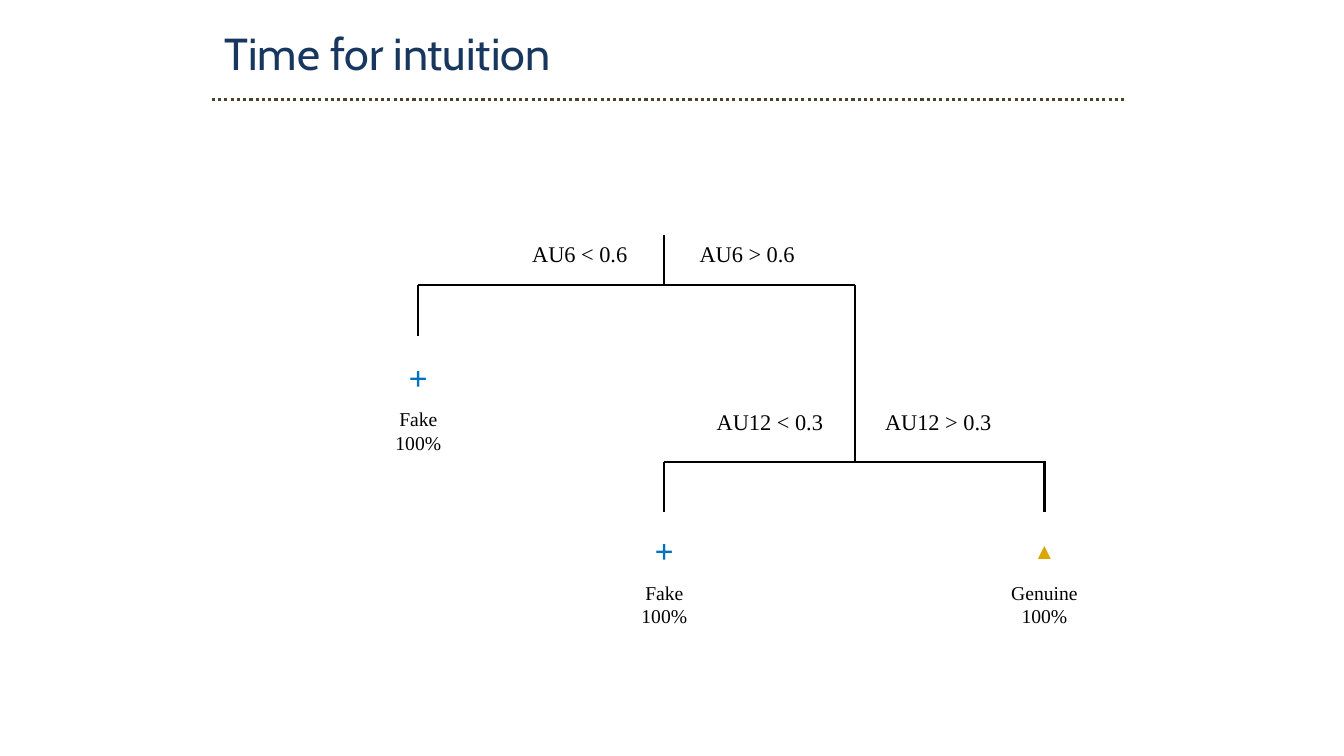
from dataclasses import dataclass

import pptx
import pptx.dml.color
import pptx.enum.dml
import pptx.enum.shapes
import pptx.enum.text
import pptx.oxml.ns
import pptx.util
from lxml import etree
from pptx.util import Inches

SERIF = "Times New Roman"
BLACK = "000000"
DROP = 0.5  # length of the branch above each leaf


@dataclass
class Split:
    feature: str
    threshold: str
    x: float
    stem_top: float
    bar_y: float
    left_x: float
    right_x: float
    label_top: float
    label_width: float
    label_gap: float


@dataclass
class Leaf:
    label: str
    x: float
    branch_top: float
    label_top: float
    label_width: float
    symbol: str
    symbol_size: int
    symbol_color: str
    symbol_width: float
    symbol_height: float
    bold: bool = False


FAKE = dict(label="Fake", label_width=0.66, symbol="+", symbol_size=24,
            symbol_color="0070C0", symbol_width=0.39, symbol_height=0.5, bold=True)
GENUINE = dict(label="Genuine", label_width=0.87, symbol="▲", symbol_size=16,
               symbol_color="DAA600", symbol_width=0.42, symbol_height=0.37)

SPLITS = [
    Split("AU6", "0.6", 6.59, 2.33, 2.83, 4.15, 8.48, 2.33, 1.16, 0.25),
    Split("AU12", "0.3", 8.48, 2.83, 4.58, 6.59, 10.37, 4.0, 1.27, 0.2),
]
LEAVES = [
    Leaf(x=4.15, branch_top=2.83, label_top=3.99, **FAKE),
    Leaf(x=6.59, branch_top=4.58, label_top=5.71, **FAKE),
    Leaf(x=10.36, branch_top=4.58, label_top=5.71, **GENUINE),
]


def rgb(color: str) -> pptx.dml.color.RGBColor:
    return pptx.dml.color.RGBColor.from_string(color)


def add_line(slide, x1: float, y1: float, x2: float, y2: float,
             color: str = BLACK, width: float = 1.5, dash=None) -> None:
    line = slide.shapes.add_connector(
        pptx.enum.shapes.MSO_CONNECTOR.STRAIGHT,
        Inches(x1), Inches(y1), Inches(x2), Inches(y2))
    line.line.color.rgb = rgb(color)
    line.line.width = pptx.util.Pt(width)
    if dash is not None:
        line.line.dash_style = dash
    etree.SubElement(line._element.spPr, pptx.oxml.ns.qn("a:effectLst"))


def add_text(slide, lines: list[str], left: float, top: float, width: float,
             height: float, size: int, color: str = BLACK, font: str = SERIF,
             bold: bool = False, centered: bool = False, wrap: bool = False) -> None:
    box = slide.shapes.add_textbox(
        Inches(left), Inches(top), Inches(width), Inches(height))
    frame = box.text_frame
    frame.word_wrap = wrap
    frame.auto_size = pptx.enum.text.MSO_AUTO_SIZE.SHAPE_TO_FIT_TEXT
    frame.text = "\n".join(lines)
    for paragraph in frame.paragraphs:
        if centered:
            paragraph.alignment = pptx.enum.text.PP_ALIGN.CENTER
        paragraph.font.name = font
        paragraph.font.size = pptx.util.Pt(size)
        paragraph.font.bold = bold
        paragraph.font.color.rgb = rgb(color)


def draw_split(slide, split: Split) -> None:
    add_line(slide, split.x, split.stem_top, split.x, split.bar_y)
    for end_x in (split.left_x, split.right_x):
        add_line(slide, split.x, split.bar_y, end_x, split.bar_y)
    sides = {"<": split.x - split.label_gap - split.label_width,
             ">": split.x + split.label_gap}
    for sign, left in sides.items():
        add_text(slide, [f"{split.feature} {sign} {split.threshold}"], left,
                 split.label_top, split.label_width, 0.37, 16)


def draw_leaf(slide, leaf: Leaf) -> None:
    add_line(slide, leaf.x, leaf.branch_top, leaf.x, leaf.branch_top + DROP)
    symbol_center_y = leaf.label_top - 0.25
    add_text(slide, [leaf.symbol], leaf.x - leaf.symbol_width / 2,
             symbol_center_y - leaf.symbol_height / 2, leaf.symbol_width,
             leaf.symbol_height, leaf.symbol_size, leaf.symbol_color, bold=leaf.bold)
    add_text(slide, [leaf.label, "100%"], leaf.x - leaf.label_width / 2,
             leaf.label_top, leaf.label_width, 0.57, 14, centered=True)


def main() -> None:
    presentation = pptx.Presentation()
    presentation.slide_width = Inches(13.33)
    presentation.slide_height = Inches(7.5)
    slide = presentation.slides.add_slide(presentation.slide_layouts[6])

    add_text(slide, ["Time for intuition"], 2.13, 0.21, 8.79, 0.64, 32,
             "17375E", "Cabin", wrap=True)
    add_line(slide, 2.1, 0.99, 11.16, 0.99, "4A452A", 2.25,
             pptx.enum.dml.MSO_LINE.ROUND_DOT)
    for split in SPLITS:
        draw_split(slide, split)
    for leaf in LEAVES:
        draw_leaf(slide, leaf)

    presentation.save("out.pptx")


if __name__ == "__main__":
    main()
